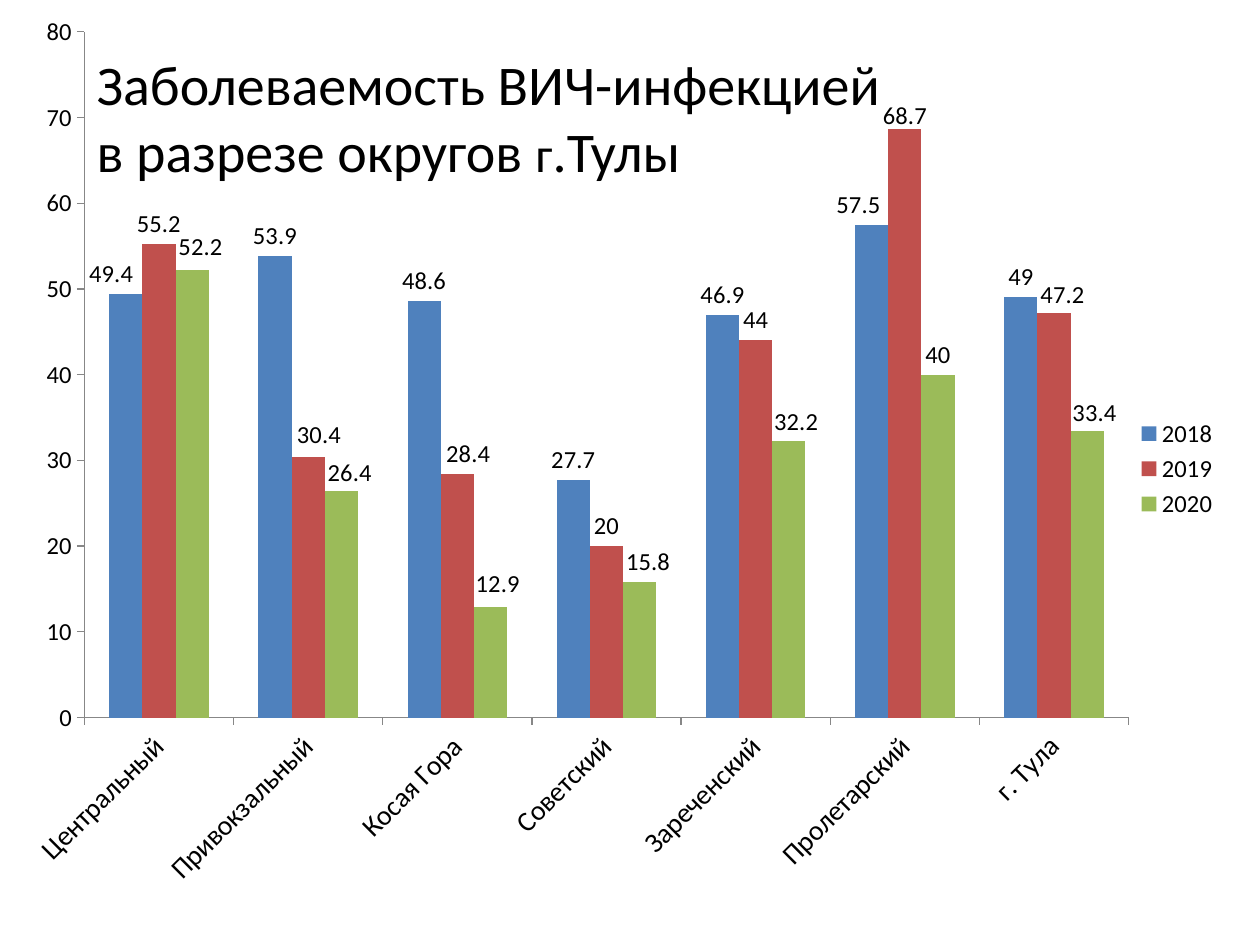
from lxml.etree import SubElement
from pptx import Presentation
from pptx.chart.data import CategoryChartData
from pptx.dml.color import RGBColor
from pptx.enum.chart import XL_CHART_TYPE, XL_LABEL_POSITION, XL_LEGEND_POSITION, XL_TICK_MARK
from pptx.enum.text import MSO_ANCHOR
from pptx.oxml import parse_xml
from pptx.oxml.ns import nsdecls, qn
from pptx.util import Pt

COLORS = {"text": "000000", "axis": "878787", "2018": "4F81BD", "2019": "C0504D", "2020": "9BBB59"}
FONT = "Calibri"
DISTRICTS = ["Центральный", "Привокзальный", "Косая Гора", "Советский",
             "Зареченский", "Пролетарский", "г. Тула"]
RATES = {
    "2018": [49.4, 53.9, 48.6, 27.7, 46.9, 57.5, 49],
    "2019": [55.2, 30.4, 28.4, 20, 44, 68.7, 47.2],
    "2020": [52.2, 26.4, 12.9, 15.8, 32.2, 40, 33.4],
}
# Label shifts in thousandths of the chart's width and height, by district index
LABEL_SHIFTS = {
    "2018": {0: (-12, 0), 5: (-11, 0)},
    "2019": {1: (9, -2), 2: (9, 0), 5: (0, 8), 6: (7, 2)},
    "2020": {0: (7, -3), 1: (7, 2), 2: (6, -3), 3: (7, 0), 4: (6, 1), 6: (6, 2)},
}


def color(name):
    return RGBColor.from_string(COLORS[name])


def style_font(font, size, name="text"):
    font.name, font.size, font.bold = FONT, Pt(size), False
    font.color.rgb = color(name)


def add_span(para, text, size=32):
    span = para.add_run()
    span.text = text
    style_font(span.font, size)


def make_layout(**values):
    """Build a manual chart layout; values are its child elements in order."""
    layout = parse_xml(f"<c:layout {nsdecls('c')}><c:manualLayout/></c:layout>")
    for tag, value in values.items():
        SubElement(layout[0], qn(f"c:{tag}")).set("val", str(value))
    return layout


class SlideBuilder:
    def __init__(self, page):
        self.page = page

    def add_title(self, left, top, width, height):
        box = self.page.shapes.add_textbox(Pt(left), Pt(top), Pt(width), Pt(height))
        frame = box.text_frame
        frame.word_wrap = True
        frame.vertical_anchor = MSO_ANCHOR.MIDDLE
        para = frame.paragraphs[0]
        add_span(para, "Заболеваемость ВИЧ-инфекцией ")
        para.add_line_break()
        add_span(para, "в разрезе округов ")
        add_span(para, "г", size=28)
        add_span(para, ".Тулы")

    def add_rate_chart(self, left, top, width, height):
        data = CategoryChartData()
        data.categories = DISTRICTS
        for year, values in RATES.items():
            data.add_series(year, values)
        chart = self.page.shapes.add_chart(
            XL_CHART_TYPE.COLUMN_CLUSTERED, Pt(left), Pt(top), Pt(width), Pt(height), data).chart
        chart.has_title = False
        style_font(chart.font, 14)
        chart.has_legend = True
        chart.legend.position = XL_LEGEND_POSITION.RIGHT
        chart.legend.include_in_layout = False
        self.style_axes(chart)

        plot = chart.plots[0]
        plot.gap_width, plot.overlap, plot.vary_by_categories = 150, 0, False
        for series in plot.series:
            self.style_series(series)

        area = chart.element.xpath(".//c:plotArea")[0]
        for layout in area.xpath("./c:layout"):
            area.remove(layout)
        area.insert(0, make_layout(layoutTarget="inner", xMode="edge", yMode="edge",
                                   x=0.057, y=0.017, w=0.859, h=0.758))

    def style_axes(self, chart):
        for axis, size in ((chart.category_axis, 16), (chart.value_axis, 14)):
            axis.has_major_gridlines = False
            axis.major_tick_mark = XL_TICK_MARK.OUTSIDE
            axis.minor_tick_mark = XL_TICK_MARK.NONE
            axis.format.line.color.rgb = color("axis")
            axis.format.line.width = Pt(0.75)
            style_font(axis.tick_labels.font, size)
        chart.category_axis.format.line.width = Pt(0.75)
        chart.element.xpath(".//c:catAx/c:txPr/a:bodyPr")[0].set("rot", "-2700000")
        scale = chart.value_axis
        scale.minimum_scale, scale.maximum_scale, scale.major_unit = 0, 80, 10

    def style_series(self, series):
        series.format.fill.solid()
        series.format.fill.fore_color.rgb = color(series.name)
        series.invert_if_negative = False
        labels = series.data_labels
        labels.show_value = True
        labels.position = XL_LABEL_POSITION.OUTSIDE_END
        style_font(labels.font, 14)
        for index, (right, down) in LABEL_SHIFTS[series.name].items():
            label = series.points[index].data_label
            style_font(label.font, 14)
            label.position = XL_LABEL_POSITION.OUTSIDE_END
            idx = series._element.xpath(f"./c:dLbls/c:dLbl/c:idx[@val='{index}']")[0]
            idx.addnext(make_layout(x=right / 1000, y=down / 1000))


def main():
    deck = Presentation()
    deck.slide_width, deck.slide_height = Pt(720), Pt(540)
    builder = SlideBuilder(deck.slides.add_slide(deck.slide_layouts[6]))
    builder.add_rate_chart(8.6, 9.4, 694.8, 517)
    builder.add_title(48.2, 21.6, 635.8, 90)
    deck.save("out.pptx")


if __name__ == "__main__":
    main()
